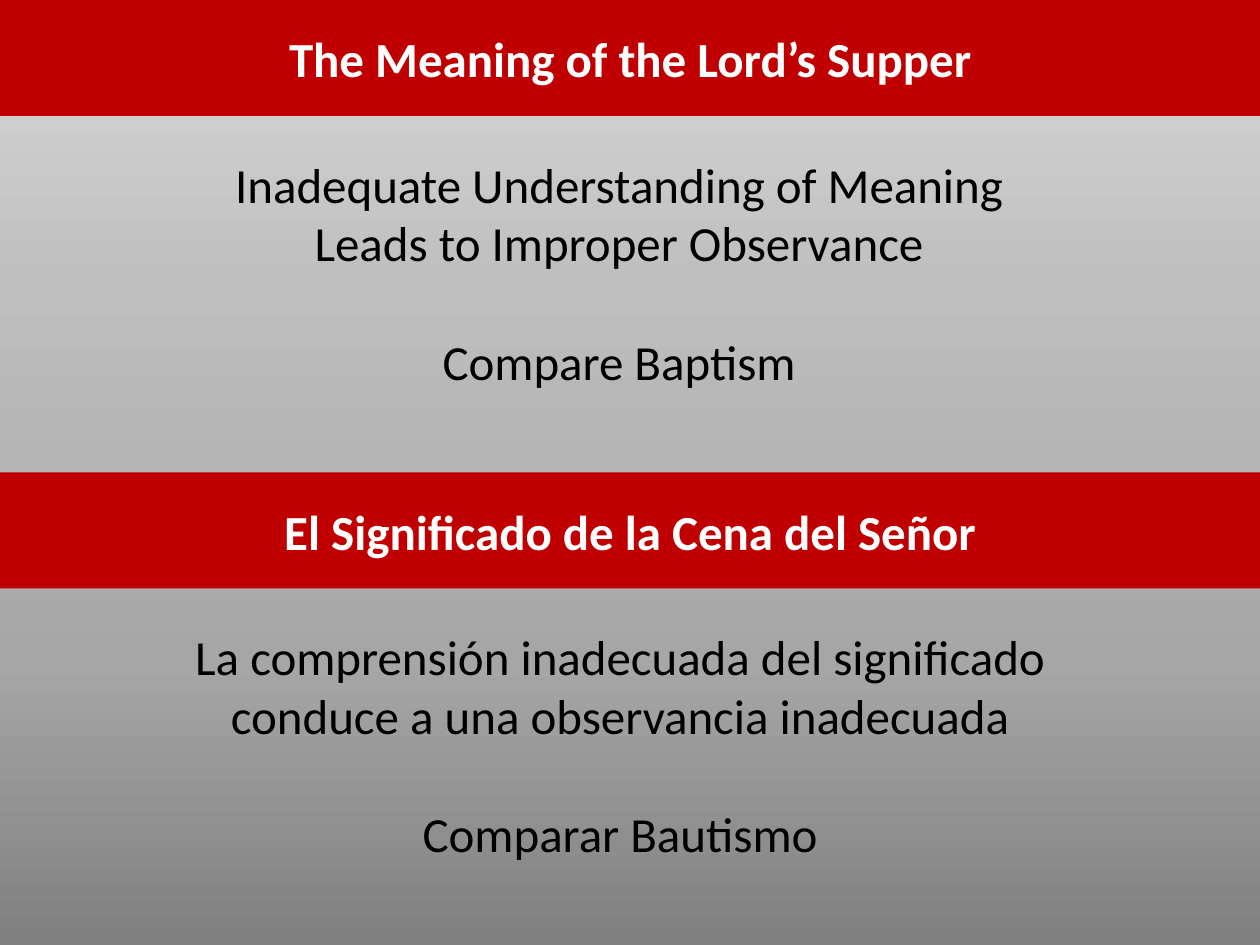
from lxml import etree
from pptx import Presentation
from pptx.dml.color import RGBColor
from pptx.enum.shapes import MSO_SHAPE
from pptx.enum.text import MSO_ANCHOR, MSO_AUTO_SIZE, PP_ALIGN
from pptx.oxml.ns import qn
from pptx.util import Pt

RECT = MSO_SHAPE.RECTANGLE
MIDDLE = MSO_ANCHOR.MIDDLE
GROW = MSO_AUTO_SIZE.SHAPE_TO_FIT_TEXT
CENTER = PP_ALIGN.CENTER

# Content: one part per language; left and width place the body text
PARTS = [
    {"title": "The Meaning of the Lord’s Supper",
     "body": ["Inadequate Understanding of Meaning Leads to Improper Observance",
              "Compare Baptism"],
     "left": 199, "width": 840},
    {"title": "El Significado de la Cena del Señor",
     "body": ["La comprensión inadecuada del significado conduce a una observancia inadecuada",
              "Comparar Bautismo"],
     "left": 158, "width": 924},
]

THEME = {
    "font": "Calibri", "size": 28, "gap": 34,
    "band": "C00000", "title": "FFFFFF", "body": "000000",
    "back": [(0, "D9D9D9"), (30, "BFBFBF"), (70, "A6A6A6"), (100, "808080")],
}

# Layout in px
WIDTH, HEIGHT = 1260, 945
BAND = 116
DROP, DEPTH = 148, 251


def px(count):
    return round(count * 914400 / 126)


def box(*sides):
    return [px(side) for side in sides]


def write(frame, lines, color, bold=False):
    frame.word_wrap = True
    frame.text = "\n".join(lines)
    for rank, para in enumerate(frame.paragraphs):
        para.alignment = CENTER
        if rank:
            para.space_before = Pt(THEME["gap"])
        for run in para.runs:
            font = run.font
            font.name, font.size = THEME["font"], Pt(THEME["size"])
            font.bold = bold
            font.color.rgb = RGBColor.from_string(color)


def paint_back(slide):
    fill = slide.background.fill
    fill.gradient()
    fill.gradient_angle = 270
    stops = slide.element.xpath(".//p:bg//a:gsLst")[0]
    for stop in list(stops):
        stops.remove(stop)
    for place, color in THEME["back"]:
        stop = etree.SubElement(stops, qn("a:gs"), pos=str(place * 1000))
        etree.SubElement(stop, qn("a:srgbClr"), val=color)


def add_band(slide, top, title):
    band = slide.shapes.add_shape(RECT, *box(0, top, WIDTH, BAND))
    band.shadow.inherit = False
    band.fill.solid()
    band.fill.fore_color.rgb = RGBColor.from_string(THEME["band"])
    band.line.fill.background()
    band.text_frame.vertical_anchor = MIDDLE
    write(band.text_frame, [title], THEME["title"], bold=True)


def add_body(slide, top, part):
    body = slide.shapes.add_textbox(
        *box(part["left"], top + DROP, part["width"], DEPTH))
    write(body.text_frame, part["body"], THEME["body"])
    body.text_frame.auto_size = GROW


def main():
    deck = Presentation()
    deck.slide_width, deck.slide_height = box(WIDTH, HEIGHT)
    slide = deck.slides.add_slide(deck.slide_layouts[6])
    paint_back(slide)

    # Each part takes an equal share of the height
    for rank, part in enumerate(PARTS):
        top = rank * HEIGHT / len(PARTS)
        add_band(slide, top, part["title"])
        add_body(slide, top, part)
    deck.save("out.pptx")


if __name__ == "__main__":
    main()
